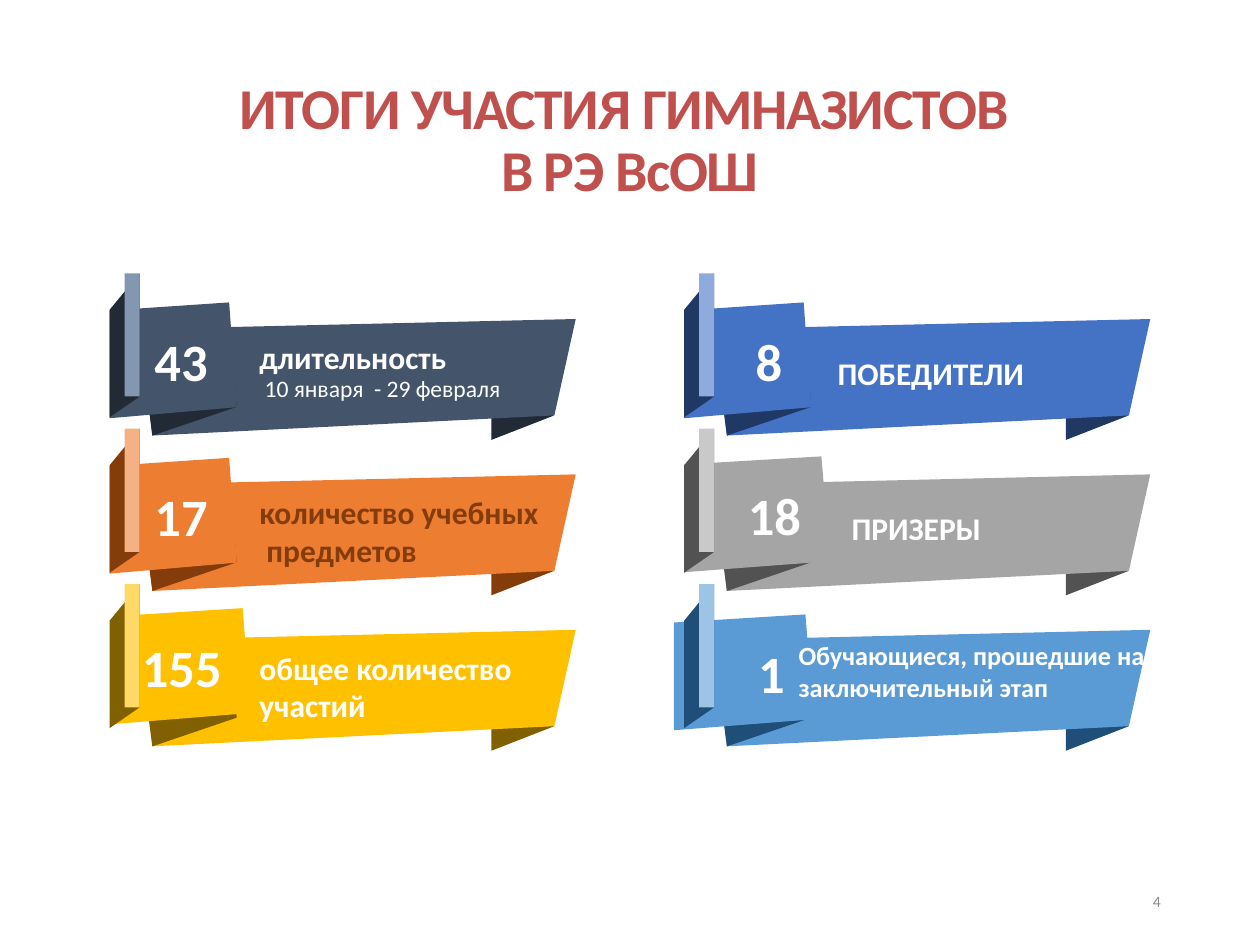
import pptx
import pptx.util
import pptx.dml.color
import pptx.enum.shapes
import pptx.enum.text

Pt = pptx.util.Pt
ALIGN = pptx.enum.text.PP_ALIGN
ANCHOR = pptx.enum.text.MSO_ANCHOR

COLORS = {
    "title": "C0504D", "number": "8C8C8C", "white": "FFFFFF",
    "slate": "44546A", "slate_dark": "222A35", "slate_light": "8497B0",
    "orange": "ED7D31", "orange_dark": "843C0B", "orange_light": "F4B183",
    "gold": "FFC000", "gold_dark": "806000", "gold_light": "FFD966",
    "blue": "4472C4", "blue_dark": "203864", "blue_light": "8FAADC",
    "gray": "A5A5A5", "gray_dark": "525252", "gray_light": "C9C9C9",
    "sky": "5B9BD5", "sky_dark": "1F4E79", "sky_light": "9DC3E6",
}

TAIL = [(254.2, 81.2), (218.2, 95.2), (218.2, 78.6)]
RIBBON = [(254.2, 81.2), (24.5, 92.7), (17.2, 31.9), (266.4, 26.1)]
FOLD = [(24.5, 92.7), (72.7, 76.3), (68.4, 31), (20.2, 59.6)]
SIDE = [(0, 20.9), (17.2, 0), (17.2, 70.4), (0, 82.3)]
POST = (8.6, 0, 8.6, 70.4)
LABEL_HEIGHT = 66.2
LABEL = (0, 16.6, 72.7)

LEFT, TOP = 62.6, 156.2
COLUMN_STEP, ROW_STEP = 328.3, 88.8

BANNERS = [
    [
        ("slate", "43", LABEL, [
            ("длительность", (78.5, 26, 176.4, 32.4), {}),
            (" 10 января  - 29 февраля", (78.5, 57.6, 176.4, 16.6),
             {"size": 13.5, "bold": False, "inset_top": 0}),
        ]),
        ("orange", "17", LABEL, [
            ("количество учебных\v предметов", (78.5, 26, 176.4, 54.7),
             {"color": "orange_dark"}),
        ]),
        ("gold", "155", (2.9, 13.7, 77.8), [
            ("общее количество участий", (78.5, 26, 176.4, 54.7), {}),
        ]),
    ],
    [
        ("blue", "8", LABEL, [("ПОБЕДИТЕЛИ", (80.6, 35.3, 176.4, 32.4), {})]),
        ("gray", "18", (0, 15.8, 83.5), [("ПРИЗЕРЫ", (88.6, 35.3, 176.4, 32.4), {})]),
        ("sky", "1", (-5.8, 17.3, 80), [
            ("Обучающиеся, прошедшие на заключительный этап",
             (58.3, 20.9, 226.8, 47.5), {"size": 15}),
        ]),
    ],
]


def rgb(name):
    return pptx.dml.color.RGBColor.from_string(COLORS[name])


def write(sp, text, size=18, color="white", bold=True, align=ALIGN.LEFT,
          anchor=ANCHOR.TOP, insets=(7.2, 3.6, 7.2, 3.6), line_spacing=None,
          spacing=None, grow=False):
    tf = sp.text_frame
    tf.word_wrap = True
    tf.vertical_anchor = anchor
    tf.margin_left, tf.margin_top, tf.margin_right, tf.margin_bottom = map(Pt, insets)
    sizing = pptx.enum.text.MSO_AUTO_SIZE
    tf.auto_size = sizing.SHAPE_TO_FIT_TEXT if grow else sizing.NONE
    p = tf.paragraphs[0]
    p.text = text
    p.alignment = align
    p.line_spacing = line_spacing
    for r in p.runs:
        r.font.name = "Calibri"
        r.font.size = Pt(size)
        r.font.bold = bold
        r.font.color.rgb = rgb(color)
        if spacing is not None:
            r._r.get_or_add_rPr().set("spc", str(round(spacing * 100)))


def paint(sp, color):
    sp.shadow.inherit = False
    sp.fill.solid()
    sp.fill.fore_color.rgb = rgb(color)
    sp.line.fill.background()


def add_polygon(s, x, y, points, color):
    start, *rest = [(Pt(x + px), Pt(y + py)) for px, py in points]
    builder = s.shapes.build_freeform(*start, scale=1.0)
    builder.add_line_segments(rest, close=True)
    sp = builder.convert_to_shape()
    paint(sp, color)
    return sp


def add_text(s, x, y, w, h, text, **fmt):
    sp = s.shapes.add_textbox(Pt(x), Pt(y), Pt(w), Pt(h))
    write(sp, text, **fmt)


def add_label(s, x, y, w, h, number, color):
    points = [(w, 0.905 * h), (0.94 * w, 0), (0, 0.07 * h), (0, h)]
    sp = add_polygon(s, x, y, points, color)
    write(sp, number, size=30, align=ALIGN.RIGHT, anchor=ANCHOR.MIDDLE,
          insets=(5, 2.9, 16.6, 2.9))


def add_banner(s, x, y, color, number, label):
    dark = color + "_dark"
    add_polygon(s, x, y, TAIL, dark)
    add_polygon(s, x, y, RIBBON, color)
    add_polygon(s, x, y, FOLD, dark)
    dx, dy, w = label
    add_label(s, x + dx, y + dy, w, LABEL_HEIGHT, number, color)
    add_polygon(s, x, y, SIDE, dark)
    dx, dy, w, h = POST
    sp = s.shapes.add_shape(pptx.enum.shapes.MSO_SHAPE.RECTANGLE,
                            Pt(x + dx), Pt(y + dy), Pt(w), Pt(h))
    paint(sp, color + "_light")


def add_captions(s, x, y, captions):
    for text, (dx, dy, w, h), options in captions:
        fmt = dict(options)
        inset_top = fmt.pop("inset_top", 10.8)
        add_text(s, x + dx, y + dy, w, h, text,
                 insets=(7.2, inset_top, 7.2, 0), grow=True, **fmt)


def add_title(s, x, y, w, h, text):
    sp = s.shapes.title
    sp.left, sp.top, sp.width, sp.height = Pt(x), Pt(y), Pt(w), Pt(h)
    write(sp, text, size=33, color="title", align=ALIGN.CENTER,
          anchor=ANCHOR.MIDDLE, line_spacing=0.9, spacing=-0.7)


def main():
    prs = pptx.Presentation()
    prs.slide_width, prs.slide_height = Pt(720), Pt(540)
    s = prs.slides.add_slide(prs.slide_layouts[5])
    add_title(s, 49.5, 28.8, 621, 104.4, "ИТОГИ УЧАСТИЯ ГИМНАЗИСТОВ \vВ РЭ ВсОШ")
    add_text(s, 508.5, 500.5, 162, 28.8, "4", size=9, color="number", bold=False,
             align=ALIGN.RIGHT, anchor=ANCHOR.MIDDLE)
    cells = [(LEFT + i * COLUMN_STEP, TOP + j * ROW_STEP, banner)
             for i, column in enumerate(BANNERS) for j, banner in enumerate(column)]
    for x, y, (color, number, label, _) in cells:
        add_banner(s, x, y, color, number, label)
    for x, y, (_, _, _, captions) in cells:
        add_captions(s, x, y, captions)
    prs.save("out.pptx")


if __name__ == "__main__":
    main()
